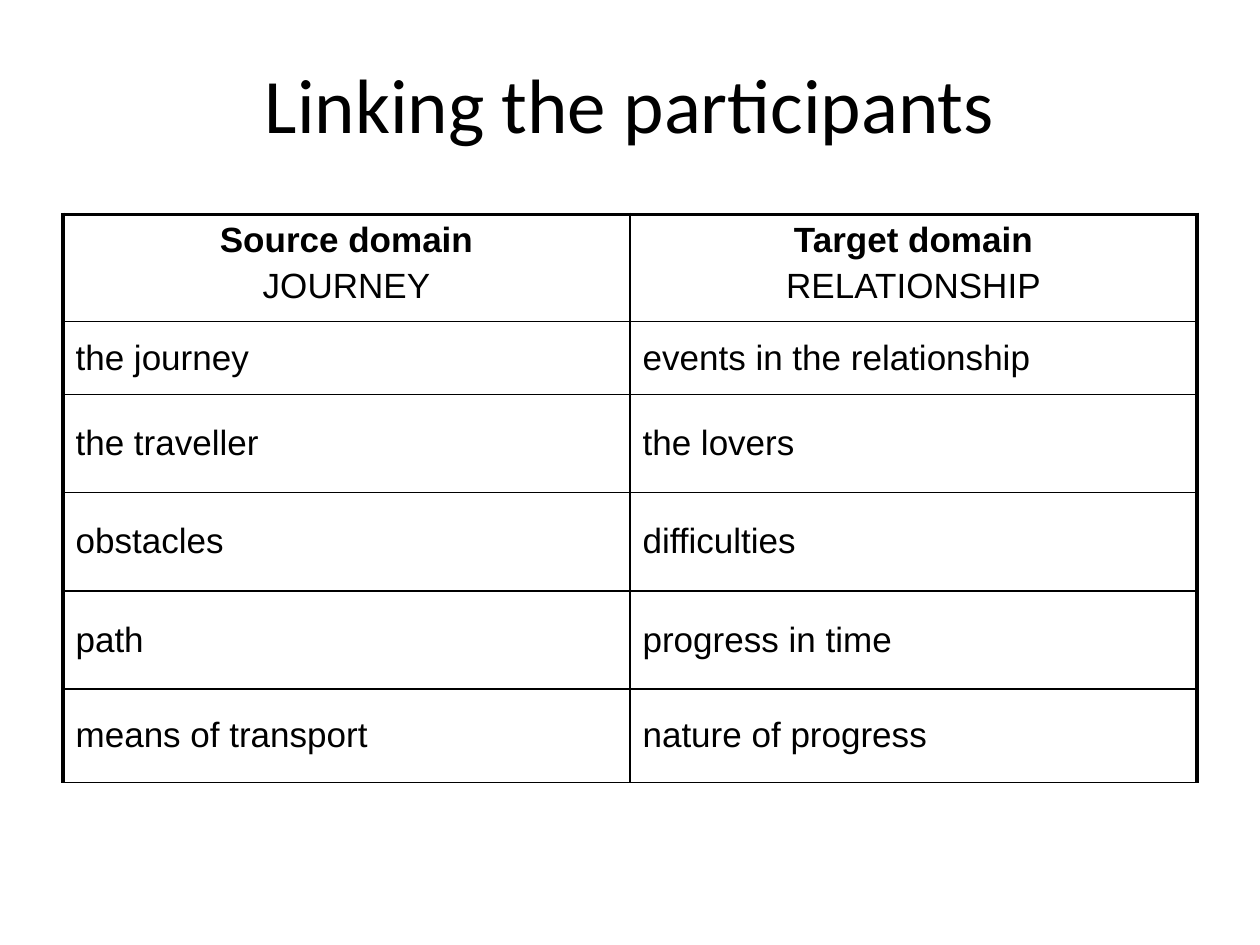
from dataclasses import dataclass

from lxml.etree import SubElement
from pptx import Presentation
from pptx.dml.color import RGBColor
from pptx.enum.text import MSO_ANCHOR, PP_ALIGN
from pptx.oxml.ns import qn
from pptx.util import Cm, Pt


@dataclass(frozen=True)
class Theme:
    ink: str = "000000"
    title_font: str = "Calibri"
    table_font: str = "Arial"
    title_size: float = 44
    table_size: float = 20
    frame_width: float = 2.25
    rule_width: float = 1


THEME = Theme()
MARGIN = Cm(1.27)
CONTENT_WIDTH = Cm(22.86)
TITLE = "Linking the participants"
DOMAINS = [("Source domain", "JOURNEY"), ("Target domain", "RELATIONSHIP")]
LINKS = [
    ("the journey", "events in the relationship"),
    ("the traveller", "the lovers"),
    ("obstacles", "difficulties"),
    ("path", "progress in time"),
    ("means of transport", "nature of progress"),
]
ROW_HEIGHTS = [2.16, 1.47, 1.98, 1.98, 1.98, 1.88]


def write_paragraph(paragraph, text, font, size, bold=False, **layout):
    run = paragraph.add_run()
    run.text = text
    for name, value in {"name": font, "size": Pt(size), "bold": bold}.items():
        setattr(run.font, name, value)
    run.font.color.rgb = RGBColor.from_string(THEME.ink)
    for name, value in layout.items():
        setattr(paragraph, name, value)


def add_title(slide):
    title = slide.shapes.add_textbox(MARGIN, Cm(0.76), CONTENT_WIDTH, Cm(2.62))
    frame = title.text_frame
    for name, value in {"word_wrap": True, "vertical_anchor": MSO_ANCHOR.MIDDLE}.items():
        setattr(frame, name, value)
    write_paragraph(frame.paragraphs[0], TITLE, THEME.title_font, THEME.title_size,
                    alignment=PP_ALIGN.CENTER)


def set_borders(cell, widths):
    """Draw the cell's sides; widths maps L, R, T and B, in that order, to points."""
    properties = cell._tc.get_or_add_tcPr()
    for side, width in widths.items():
        line = SubElement(properties, qn(f"a:ln{side}"), w=str(Pt(width)))
        SubElement(SubElement(line, qn("a:solidFill")), qn("a:srgbClr"), val=THEME.ink)


def fill_cell(cell, lines, is_header):
    cell.vertical_anchor = MSO_ANCHOR.TOP if is_header else MSO_ANCHOR.MIDDLE
    frame = cell.text_frame
    for index, text in enumerate(lines):
        paragraph = frame.add_paragraph() if index else frame.paragraphs[0]
        write_paragraph(paragraph, text, THEME.table_font, THEME.table_size,
                        bold=is_header and index == 0, space_before=Pt(4),
                        alignment=PP_ALIGN.CENTER if is_header else PP_ALIGN.LEFT)


def add_domain_table(slide):
    rows = [DOMAINS] + [[(text,) for text in link] for link in LINKS]
    table = slide.shapes.add_table(len(rows), len(DOMAINS), MARGIN, Cm(4.32),
                                   CONTENT_WIDTH, Cm(sum(ROW_HEIGHTS))).table
    for name in ("first_row", "horz_banding"):
        setattr(table, name, False)
    last_column = len(DOMAINS) - 1
    for row_index, (domain_row, height) in enumerate(zip(rows, ROW_HEIGHTS)):
        table.rows[row_index].height = Cm(height)
        for column_index, lines in enumerate(domain_row):
            cell = table.cell(row_index, column_index)
            fill_cell(cell, lines, is_header=row_index == 0)
            on_frame = {"L": column_index == 0, "R": column_index == last_column,
                        "T": row_index == 0, "B": False}
            set_borders(cell, {side: THEME.frame_width if outer else THEME.rule_width
                               for side, outer in on_frame.items()})
            cell.fill.background()


def main():
    presentation = Presentation()
    presentation.slide_width, presentation.slide_height = Cm(25.4), Cm(19.05)
    slide = presentation.slides.add_slide(presentation.slide_layouts[6])
    add_title(slide)
    add_domain_table(slide)
    presentation.save("out.pptx")


if __name__ == "__main__":
    main()
